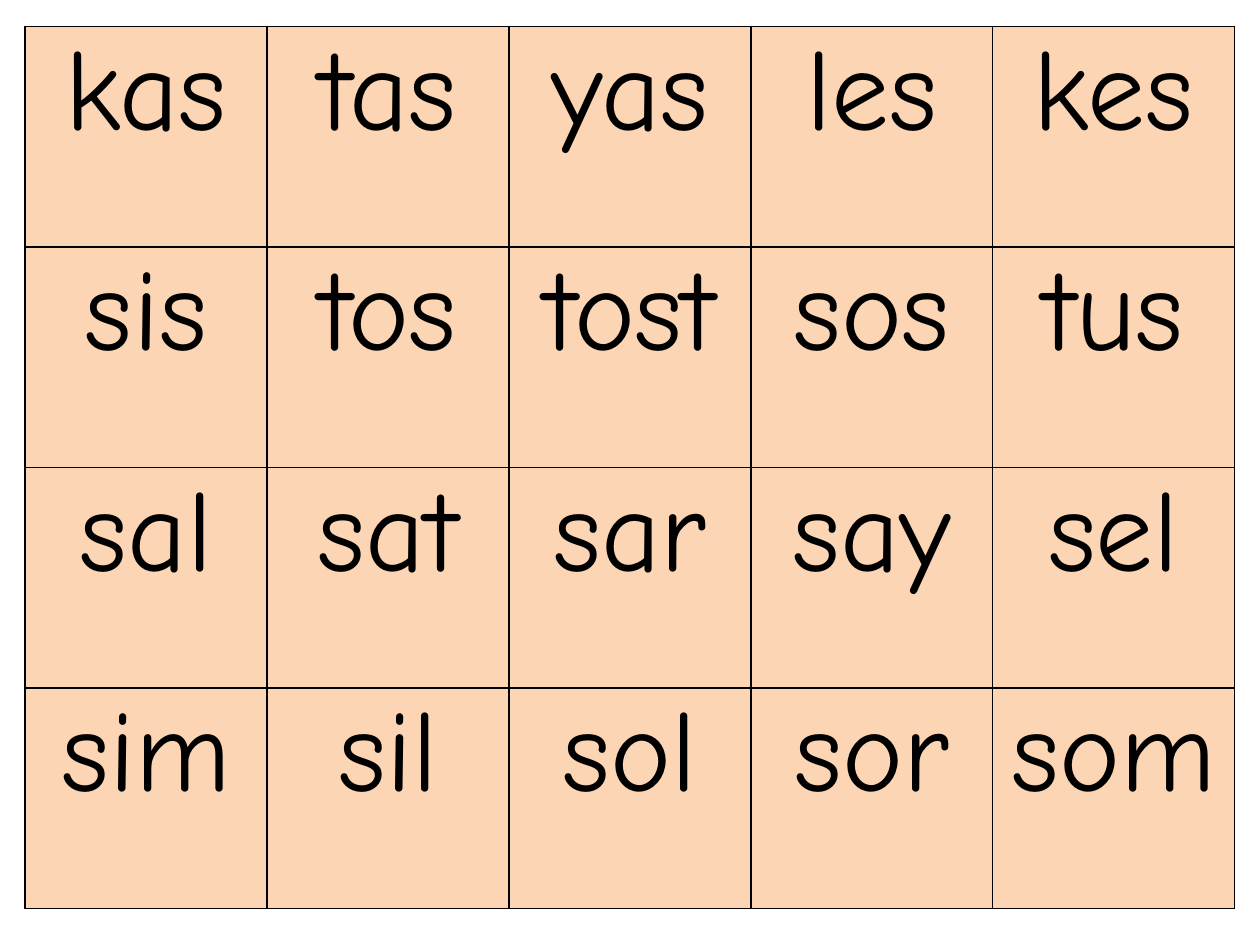
"""Build a slide with a grid of syllable reading cards."""
from dataclasses import dataclass

from lxml import etree
from pptx import Presentation
from pptx.dml.color import RGBColor
from pptx.enum.text import MSO_ANCHOR, PP_ALIGN
from pptx.oxml.ns import qn
from pptx.util import Inches, Pt

CENTER = PP_ALIGN.CENTER
TOP = MSO_ANCHOR.TOP
BLANK_LAYOUT = 6

WORDS = [
    "kas tas yas les kes".split(),
    "sis tos tost sos tus".split(),
    "sal sat sar say sel".split(),
    "sim sil sol sor som".split(),
]


@dataclass(frozen=True)
class Theme:
    font: str = "Comic Neue"
    word_size: int = 66
    ink: str = "000000"
    card: str = "FCD5B5"
    border_width: int = 1


def write_text(frame, text, *, font, size, color, align=CENTER):
    paragraph = frame.paragraphs[0]
    paragraph.alignment = align
    run = paragraph.add_run()
    run.text = text
    run.font.name = font
    run.font.size = Pt(size)
    run.font.color.rgb = RGBColor.from_string(color)


class CardSlide:
    def __init__(self, slide, theme):
        self.slide = slide
        self.theme = theme

    def word_grid(self, words, left, top, card_width, card_height):
        rows, columns = len(words), len(words[0])
        grid = self.slide.shapes.add_table(
            rows, columns, Inches(left), Inches(top),
            Inches(card_width * columns), Inches(card_height * rows),
        ).table
        grid.first_row = False
        grid.horz_banding = False
        for column in grid.columns:
            column.width = Inches(card_width)
        for row, row_words in zip(grid.rows, words):
            row.height = Inches(card_height)
            for card, word in zip(row.cells, row_words):
                self.word_card(card, word)

    def word_card(self, card, word):
        theme = self.theme
        card.margin_left = card.margin_right = Inches(0.07)
        card.margin_top = card.margin_bottom = 0
        card.vertical_anchor = TOP
        self.card_border(card)
        card.fill.solid()
        card.fill.fore_color.rgb = RGBColor.from_string(theme.card)
        write_text(card.text_frame, word, font=theme.font,
                   size=theme.word_size, color=theme.ink)

    def card_border(self, card):
        properties = card._tc.get_or_add_tcPr()
        for side in ("a:lnL", "a:lnR", "a:lnT", "a:lnB"):
            border = etree.SubElement(properties, qn(side),
                                      w=str(Pt(self.theme.border_width)))
            fill = etree.SubElement(border, qn("a:solidFill"))
            etree.SubElement(fill, qn("a:srgbClr"), val=self.theme.ink)


def main():
    deck = Presentation()
    deck.slide_width = Inches(10)
    deck.slide_height = Inches(7.5)
    slide = deck.slides.add_slide(deck.slide_layouts[BLANK_LAYOUT])
    CardSlide(slide, Theme()).word_grid(
        WORDS, left=0.2, top=0.21, card_width=1.92, card_height=1.75)
    deck.save("out.pptx")


if __name__ == "__main__":
    main()
